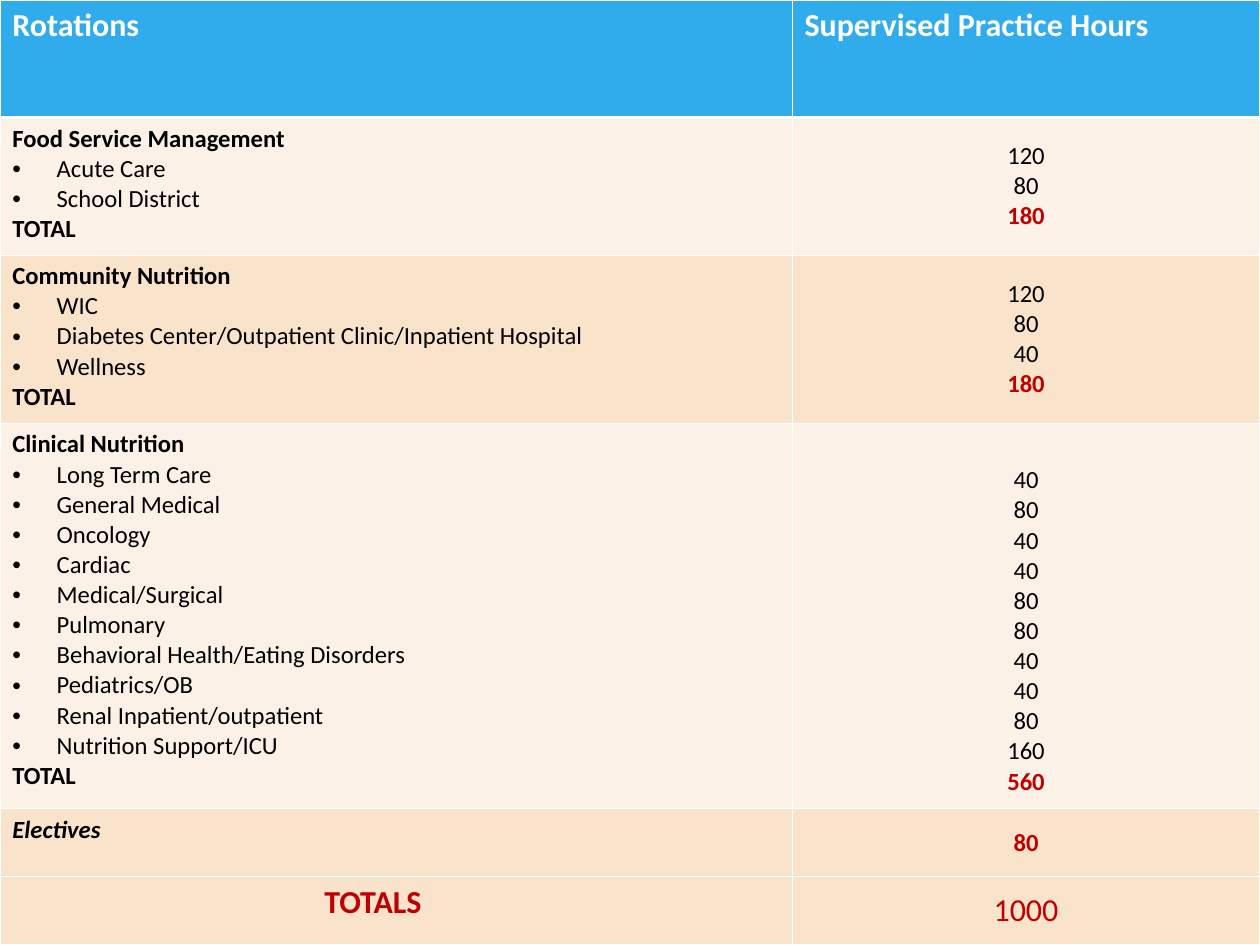
from dataclasses import dataclass

from lxml import etree
from pptx import Presentation
from pptx.dml.color import RGBColor
from pptx.enum.text import MSO_ANCHOR, PP_ALIGN
from pptx.oxml.ns import qn
from pptx.util import Inches, Pt

LEFT, CENTER = PP_ALIGN.LEFT, PP_ALIGN.CENTER
TOP, MIDDLE = MSO_ANCHOR.TOP, MSO_ANCHOR.MIDDLE

COLORS = {
    "header": "30ACEC",
    "light": "FCF1E7",
    "dark": "F9E3CB",
    "white": "FFFFFF",
    "black": "000000",
    "red": "C00000",
}
FONT = "Calibri"
SLIDE_WIDTH, SLIDE_HEIGHT = 14.22, 10.67
COLUMN_WIDTHS = (8.94, 5.28)
SIDE_MARGIN, EDGE_MARGIN = 0.14, 0.07
BULLET_INDENT = 0.5
TOTALS_INDENT = 3.52
LINE_HEIGHT = 0.34


@dataclass
class Line:
    text: str
    color: str = "black"
    size: int = 20
    bold: bool = True
    italic: bool = False
    bullet: bool = False
    align: PP_ALIGN = LEFT
    indent: float = 0


@dataclass
class Row:
    height: float
    fill: str
    label: list[Line]
    hours: list[Line]
    hours_anchor: MSO_ANCHOR = MIDDLE
    hours_offset: float = 0


def rotation_row(height: float, fill: str, title: str, places: dict[str, int],
                 total: int, offset: float = 0) -> Row:
    """A titled group of rotations with its hours and its total."""
    label = [Line(title)]
    label += [Line(place, bold=False, bullet=True) for place in places]
    label.append(Line("TOTAL"))
    hours = [Line(str(value), bold=False, align=CENTER) for value in places.values()]
    hours.append(Line(str(total), "red", align=CENTER))
    return Row(height, fill, label, hours, hours_offset=offset)


ROWS = [
    Row(1.33, "header", [Line("Rotations", "white", 26)],
        [Line("Supervised Practice Hours", "white", 26)], TOP),
    rotation_row(1.55, "light", "Food Service Management",
                 {"Acute Care": 120, "School District": 80}, 180),
    rotation_row(1.9, "dark", "Community Nutrition", {
        "WIC": 120,
        "Diabetes Center/Outpatient Clinic/Inpatient Hospital": 80,
        "Wellness": 40,
    }, 180),
    rotation_row(4.35, "light", "Clinical Nutrition", {
        "Long Term Care": 40,
        "General Medical": 80,
        "Oncology": 40,
        "Cardiac": 40,
        "Medical/Surgical": 80,
        "Pulmonary": 80,
        "Behavioral Health/Eating Disorders": 40,
        "Pediatrics/OB": 40,
        "Renal Inpatient/outpatient": 80,
        "Nutrition Support/ICU": 160,
    }, 560, LINE_HEIGHT),
    Row(0.77, "dark", [Line("Electives", italic=True)],
        [Line("80", "red", align=CENTER)]),
    Row(0.77, "dark", [Line("TOTALS", "red", 26, indent=TOTALS_INDENT)],
        [Line("1000", "red", 26, bold=False, align=CENTER)]),
]


def set_borders(cell, top: int, bottom: int) -> None:
    """Draw white borders, with widths in points."""
    properties = cell._tc.get_or_add_tcPr()
    widths = {"a:lnL": 1, "a:lnR": 1, "a:lnT": top, "a:lnB": bottom}
    for position, (tag, width) in enumerate(widths.items()):
        border = etree.Element(qn(tag), w=str(Pt(width)))
        fill = etree.SubElement(border, qn("a:solidFill"))
        etree.SubElement(fill, qn("a:srgbClr"), val=COLORS["white"])
        properties.insert(position, border)


def set_indent(paragraph, line: Line) -> None:
    properties = paragraph._p.get_or_add_pPr()
    if line.bullet:
        properties.set("marL", str(Inches(BULLET_INDENT)))
        properties.set("indent", str(-Inches(BULLET_INDENT)))
        etree.SubElement(properties, qn("a:buFont"), typeface="Arial")
        etree.SubElement(properties, qn("a:buChar"), char="•")
    elif line.indent:
        properties.set("marL", str(Inches(line.indent)))


def write_lines(cell, lines: list[Line]) -> None:
    frame = cell.text_frame
    for index, line in enumerate(lines):
        paragraph = frame.add_paragraph() if index else frame.paragraphs[0]
        paragraph.alignment = line.align
        set_indent(paragraph, line)
        run = paragraph.add_run()
        run.text = line.text
        font_format = {"name": FONT, "size": Pt(line.size),
                       "bold": line.bold, "italic": line.italic}
        for name, value in font_format.items():
            setattr(run.font, name, value)
        run.font.color.rgb = RGBColor.from_string(COLORS[line.color])


def fill_cell(cell, lines: list[Line], fill: str, anchor: MSO_ANCHOR,
              offset: float, row_index: int) -> None:
    cell_format = {
        "margin_left": Inches(SIDE_MARGIN),
        "margin_right": Inches(SIDE_MARGIN),
        "margin_top": Inches(EDGE_MARGIN + offset),
        "margin_bottom": Inches(EDGE_MARGIN),
        "vertical_anchor": anchor,
    }
    for name, value in cell_format.items():
        setattr(cell, name, value)
    cell.fill.solid()
    cell.fill.fore_color.rgb = RGBColor.from_string(COLORS[fill])
    set_borders(cell, top=3 if row_index == 1 else 1, bottom=3 if row_index == 0 else 1)
    write_lines(cell, lines)


def add_hours_table(slide) -> None:
    table = slide.shapes.add_table(
        len(ROWS), len(COLUMN_WIDTHS), Inches(0), Inches(0),
        Inches(SLIDE_WIDTH), Inches(SLIDE_HEIGHT)).table
    for column, width in zip(table.columns, COLUMN_WIDTHS):
        column.width = Inches(width)
    for index, row in enumerate(ROWS):
        table.rows[index].height = Inches(row.height)
        fill_cell(table.cell(index, 0), row.label, row.fill, TOP, 0, index)
        fill_cell(table.cell(index, 1), row.hours, row.fill,
                  row.hours_anchor, row.hours_offset, index)


def main() -> None:
    presentation = Presentation()
    presentation.slide_width = Inches(SLIDE_WIDTH)
    presentation.slide_height = Inches(SLIDE_HEIGHT)
    slide = presentation.slides.add_slide(presentation.slide_layouts[6])
    add_hours_table(slide)
    presentation.save("out.pptx")


if __name__ == "__main__":
    main()
